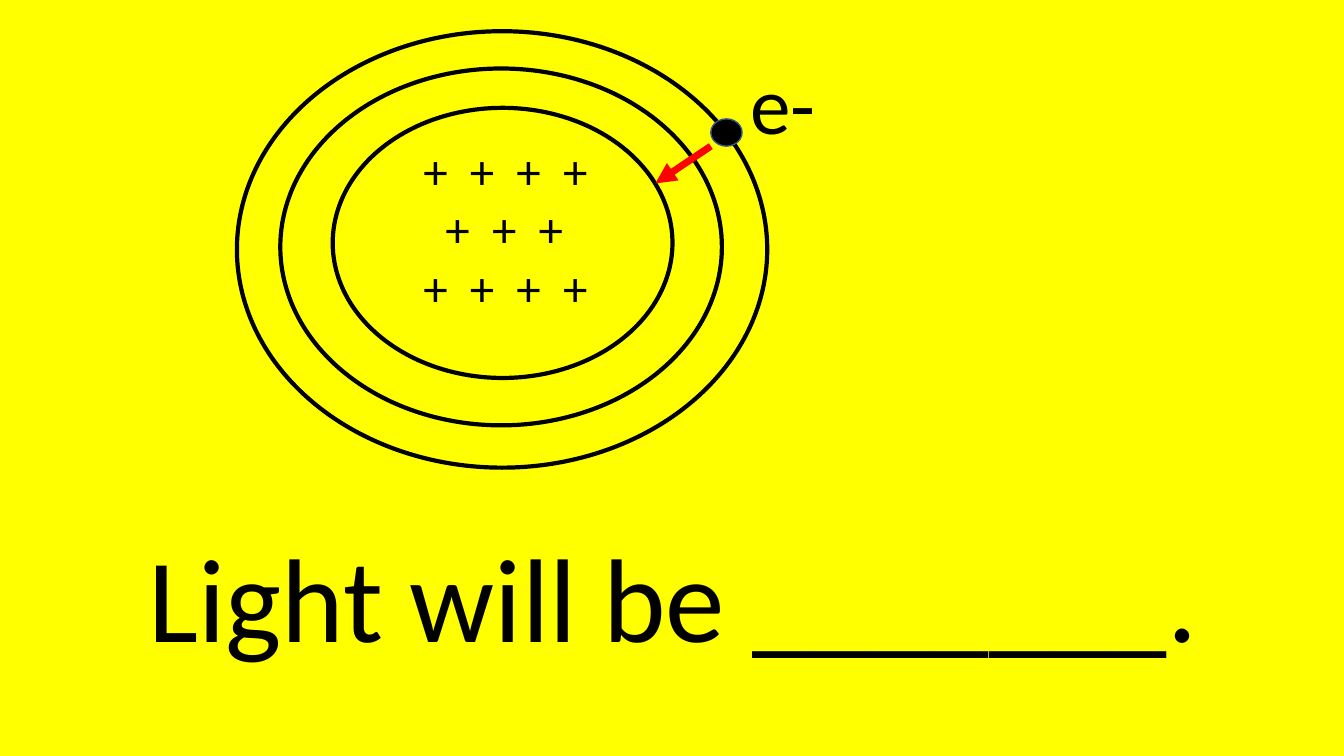
"""Build a slide of an electron dropping between the shells of an atom."""
from dataclasses import dataclass

from lxml.etree import SubElement
from pptx import Presentation
from pptx.dml.color import RGBColor
from pptx.enum.shapes import MSO_CONNECTOR, MSO_SHAPE
from pptx.enum.text import MSO_ANCHOR, MSO_AUTO_SIZE, PP_ALIGN
from pptx.oxml.ns import qn
from pptx.util import Inches, Pt


@dataclass(frozen=True)
class Theme:
    font: str = "Calibri"
    yellow: RGBColor = RGBColor(0xFF, 0xFF, 0x00)
    black: RGBColor = RGBColor(0x00, 0x00, 0x00)
    blue: RGBColor = RGBColor(0x32, 0x54, 0x91)
    red: RGBColor = RGBColor(0xFF, 0x00, 0x00)
    title: Pt = Pt(85)
    electron: Pt = Pt(100)
    proton: Pt = Pt(35)


theme = Theme()


def add_text(p, text, size):
    r = p.add_run()
    r.text = text
    r.font.name = theme.font
    r.font.size = size
    r.font.color.rgb = theme.black
    return r


def add_ellipse(s, box, line, width):
    sp = s.shapes.add_shape(MSO_SHAPE.OVAL, *map(Inches, box))
    sp.shadow.inherit = False
    sp.fill.background()
    sp.line.color.rgb = line
    sp.line.width = Pt(width)
    return sp


prs = Presentation()
prs.slide_width, prs.slide_height = Inches(13.33), Inches(7.5)
s = prs.slides.add_slide(prs.slide_layouts[5])
s.background.fill.solid()
s.background.fill.fore_color.rgb = theme.yellow

title = s.shapes.title
title.left, title.top = Inches(0), Inches(3.84)
title.width, title.height = Inches(13.08), Inches(2.84)
tf = title.text_frame
tf.word_wrap = True
tf.auto_size = MSO_AUTO_SIZE.NONE
tf.vertical_anchor = MSO_ANCHOR.BOTTOM
p = tf.paragraphs[0]
p.alignment = PP_ALIGN.CENTER
p.line_spacing = 0.9
add_text(p, " Light will be _______.", theme.title)

shells = [(3.3, 1.07, 3.37, 2.68), (2.78, 0.68, 4.38, 3.54), (2.35, 0.31, 5.26, 4.33)]
for shell in shells:
    add_ellipse(s, shell, theme.black, 3)

nucleus = s.shapes.add_textbox(Inches(4.1), Inches(1.34), Inches(3.11), Inches(2.46))
tf = nucleus.text_frame
tf.word_wrap = True
for i, (count, indent) in enumerate([(4, 0), (3, 0.22), (4, 0)]):
    p = tf.add_paragraph() if i else tf.paragraphs[0]
    p._p.get_or_add_pPr().set("marL", str(Inches(indent)))
    add_text(p, "  ".join("+" * count), theme.proton)

electron = add_ellipse(s, (7.05, 1.18, 0.31, 0.27), theme.blue, 1)
electron.fill.solid()
electron.fill.fore_color.rgb = theme.black

label = s.shapes.add_textbox(Inches(7.34), Inches(0.31), Inches(1.59), Inches(1.78))
label.text_frame.word_wrap = True
r = add_text(label.text_frame.paragraphs[0], "e-", theme.electron)
r.font._element.set("baseline", "30000")

drop = s.shapes.add_connector(
    MSO_CONNECTOR.STRAIGHT, Inches(7.05), Inches(1.45), Inches(6.5), Inches(1.82))
drop.line.color.rgb = theme.red
drop.line.width = Pt(5)
SubElement(drop.line._get_or_add_ln(), qn("a:tailEnd"), type="triangle")
SubElement(drop._element.spPr, qn("a:effectLst"))

prs.save("out.pptx")
